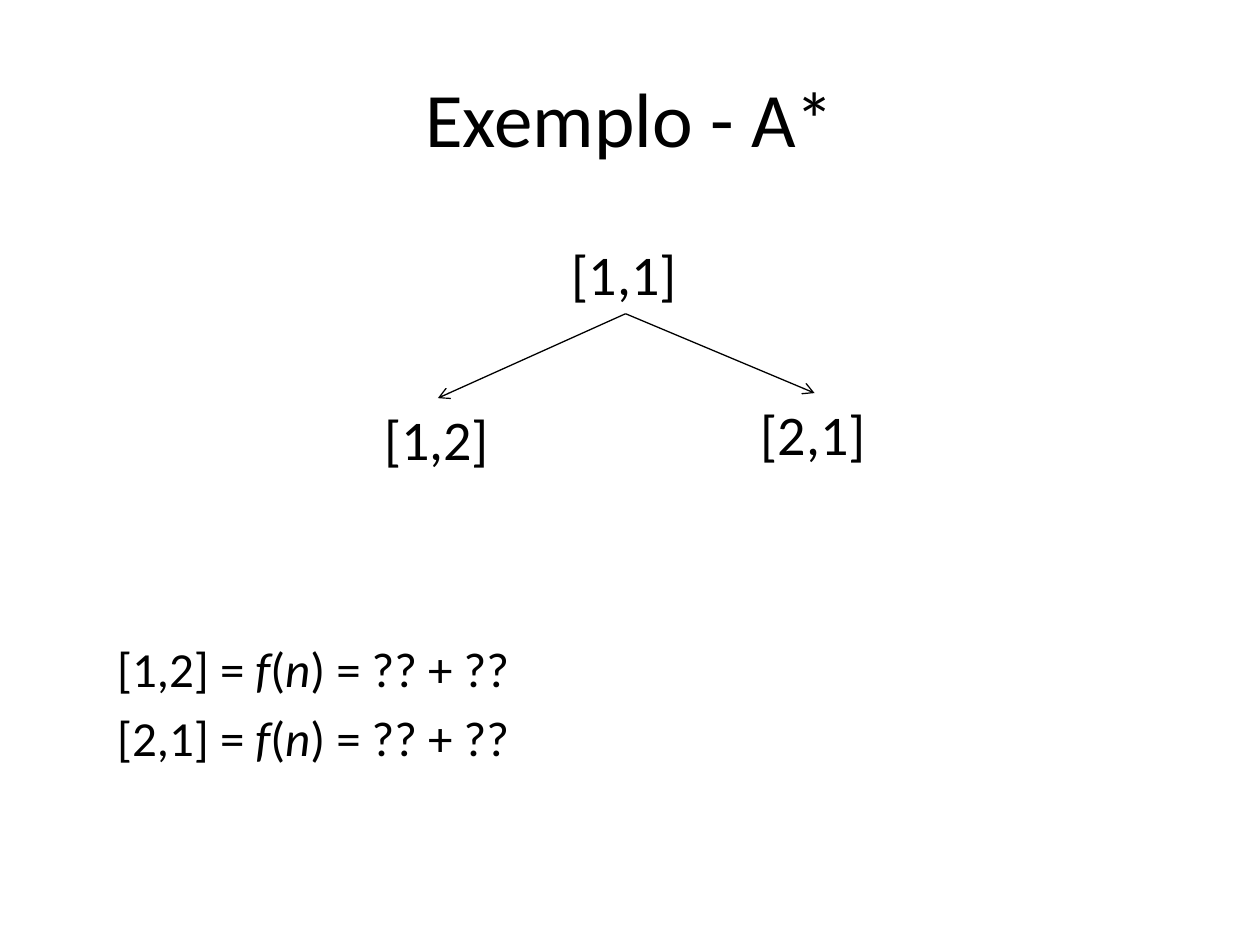
from lxml import etree
from pptx import Presentation
from pptx.dml.color import RGBColor
from pptx.enum.shapes import MSO_CONNECTOR
from pptx.enum.text import MSO_ANCHOR, MSO_AUTO_SIZE, PP_ALIGN
from pptx.oxml.ns import qn
from pptx.util import Inches, Pt

STRAIGHT = MSO_CONNECTOR.STRAIGHT
BLACK = RGBColor(0, 0, 0)
FONT = "Calibri"
BOTTOM, TOP = 2, 0

TITLE = "Exemplo - A*"
NODE_SIZE = (1.05, 0.64)
NODES = {  # label: (left, top)
    "[1,1]": (4.44, 1.85),
    "[1,2]": (2.95, 3.16),
    "[2,1]": (5.94, 3.12),
}
EDGES = [("[1,1]", "[1,2]"), ("[1,1]", "[2,1]")]
EVALUATED = ["[1,2]", "[2,1]"]
FORMULA = [(" = ", False), ("f", True), ("(", False), ("n", True), (") = ?? + ??", False)]


def place(shape, left, top, width, height):
    shape.left, shape.top = Inches(left), Inches(top)
    shape.width, shape.height = Inches(width), Inches(height)


def style(paragraph, size):
    paragraph.font.name = FONT
    paragraph.font.size = Pt(size)
    paragraph.font.color.rgb = BLACK


def add_node(slide, label, left, top):
    box = slide.shapes.add_textbox(*map(Inches, (left, top, *NODE_SIZE)))
    frame = box.text_frame
    frame.word_wrap = False
    frame.auto_size = MSO_AUTO_SIZE.SHAPE_TO_FIT_TEXT
    frame.text = label
    style(frame.paragraphs[0], 32)
    return box


def add_arrow(slide, parent, child):
    arrow = slide.shapes.add_connector(STRAIGHT, 0, 0, 0, 0)
    arrow.begin_connect(parent, BOTTOM)
    arrow.end_connect(child, TOP)
    arrow.line.color.rgb = BLACK
    arrow.line.width = Pt(0.75)
    etree.SubElement(arrow.line._get_or_add_ln(), qn("a:tailEnd"), type="arrow")
    etree.SubElement(arrow._element.spPr, qn("a:effectLst"))


def fill_formulas(body):
    frame = body.text_frame
    frame.word_wrap = True
    frame.vertical_anchor = MSO_ANCHOR.TOP
    for index, label in enumerate(EVALUATED):
        paragraph = frame.add_paragraph() if index else frame.paragraphs[0]
        properties = paragraph._p.get_or_add_pPr()
        properties.set("marL", "0")
        properties.set("indent", "0")
        etree.SubElement(properties, qn("a:buNone"))
        paragraph.space_before = Pt(5.6 if index else 0)
        style(paragraph, 28)
        for text, italic in [(label, False), *FORMULA]:
            run = paragraph.add_run()
            run.text = text
            run.font.italic = italic


def main():
    presentation = Presentation()
    presentation.slide_width, presentation.slide_height = Inches(10), Inches(7.5)
    slide = presentation.slides.add_slide(presentation.slide_layouts[1])

    title, body = slide.placeholders
    place(title, 0.5, 0.3, 9, 1.25)
    title.text_frame.text = TITLE
    title.text_frame.vertical_anchor = MSO_ANCHOR.MIDDLE
    title.text_frame.paragraphs[0].alignment = PP_ALIGN.CENTER
    style(title.text_frame.paragraphs[0], 44)

    nodes = {label: add_node(slide, label, *corner) for label, corner in NODES.items()}
    for parent, child in EDGES:
        add_arrow(slide, nodes[parent], nodes[child])

    place(body, 0.83, 5.02, 8.27, 1.25)
    fill_formulas(body)
    presentation.save("out.pptx")


if __name__ == "__main__":
    main()
